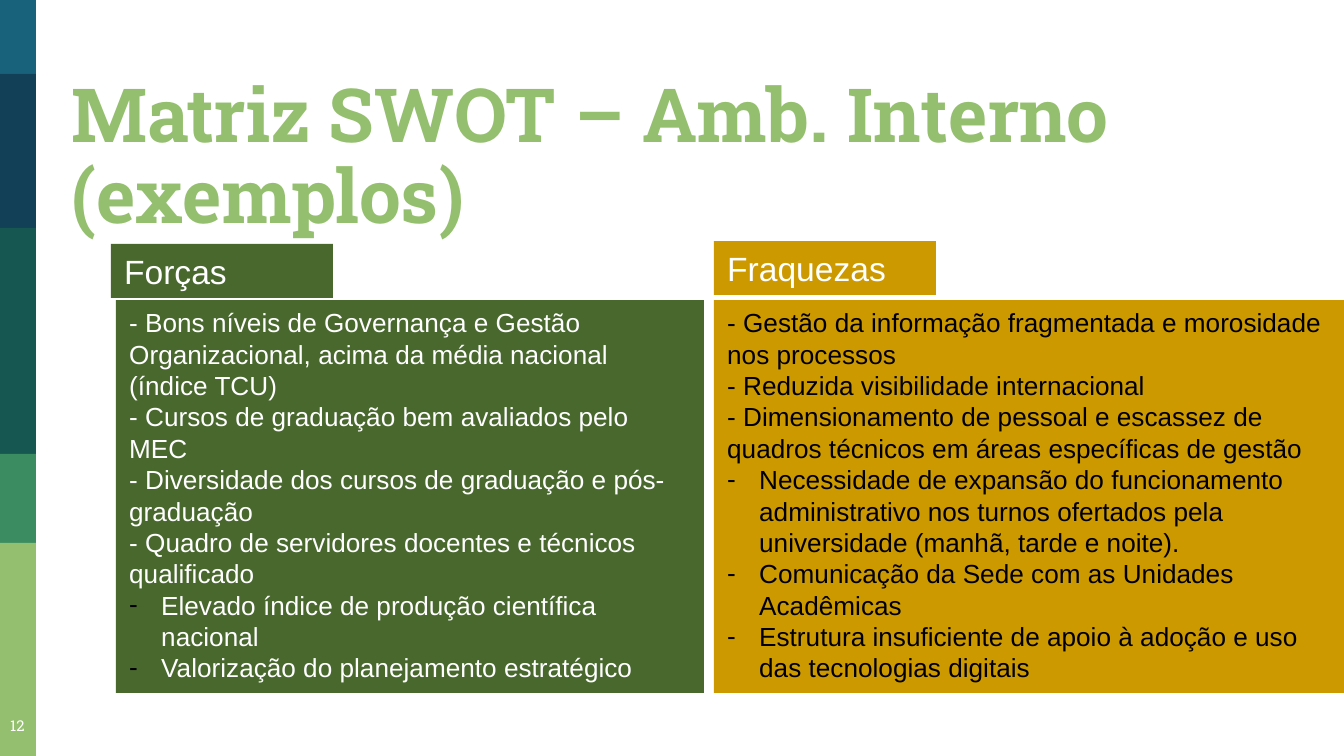
from lxml import etree
from pptx import Presentation
from pptx import util as u
from pptx.dml.color import RGBColor
from pptx.enum import shapes, text
from pptx.oxml.ns import qn

PX = 914400 / 134.4
COLORS = {
    "blue": "18637B", "navy": "124057", "teal": "165751", "green": "3B8D61",
    "lime": "94BF6E", "forest": "49682E", "gold": "CC9900",
    "white": "FFFFFF", "black": "000000",
}
FORMATS = {
    "title": {"size": u.Pt(40), "name": "Roboto Slab", "bold": True},
    "number": {"size": u.Pt(8), "name": "Roboto Slab"},
    "heading": {"size": u.Pt(18), "name": "Arial"},
    "body": {"size": u.Pt(14), "name": "Arial"},
}
INDENT = 32


def px(value):
    return u.Emu(round(value * PX))


def rgb(name):
    return RGBColor.from_string(COLORS[name])


class SlideBuilder:
    def __init__(self, slide):
        self.slide = slide

    def rectangle(self, box, fill):
        shape = self.slide.shapes.add_shape(
            shapes.MSO_SHAPE.RECTANGLE, *map(px, box))
        shape.shadow.inherit = False
        shape.fill.solid()
        shape.fill.fore_color.rgb = rgb(fill)
        shape.line.fill.background()
        return shape

    def text_box(self, box, words, style, color, **layout):
        shape = self.slide.shapes.add_textbox(*map(px, box))
        frame = shape.text_frame
        for side in ("left", "right", "top", "bottom"):
            setattr(frame, f"margin_{side}", u.Inches(0.1))
        self.add_lines(frame, [words], style, color, **layout)

    def panel(self, box, fill, lines, style, color, bullets=()):
        frame = self.rectangle(box, fill).text_frame
        self.add_lines(frame, lines, style, color)
        for line in bullets:
            paragraph = frame.add_paragraph()
            self.add_bullet(paragraph)
            self.add_line(paragraph, line, style, color)

    def add_lines(self, frame, lines, style, color,
                  anchor=text.MSO_ANCHOR.TOP, **layout):
        frame.word_wrap = True
        frame.vertical_anchor = anchor
        for index, line in enumerate(lines):
            paragraph = frame.add_paragraph() if index else frame.paragraphs[0]
            self.add_line(paragraph, line, style, color, **layout)

    def add_line(self, paragraph, line, style, color,
                 alignment=text.PP_ALIGN.LEFT, line_spacing=1.0):
        paragraph.alignment = alignment
        paragraph.line_spacing = line_spacing
        run = paragraph.add_run()
        run.text = line
        for name, value in FORMATS[style].items():
            setattr(run.font, name, value)
        run.font.color.rgb = rgb(color)

    def add_bullet(self, paragraph):
        properties = paragraph._p.get_or_add_pPr()
        properties.set("marL", str(px(INDENT)))
        properties.set("indent", str(-px(INDENT)))
        bullet_color = etree.SubElement(properties, qn("a:buClr"))
        etree.SubElement(bullet_color, qn("a:srgbClr"), val=COLORS["black"])
        etree.SubElement(properties, qn("a:buFont"), typeface="Arial")
        etree.SubElement(properties, qn("a:buChar"), char="-")


STRIPES = [("blue", 0), ("navy", 74), ("teal", 228), ("green", 454), ("lime", 543)]
STRENGTHS = [
    "- Bons níveis de Governança e Gestão Organizacional, acima da média nacional (índice TCU)",
    "- Cursos de graduação bem avaliados pelo MEC",
    "- Diversidade dos cursos de graduação e pós-graduação",
    "- Quadro de servidores docentes e técnicos qualificado",
]
STRENGTH_BULLETS = [
    "Elevado índice de produção científica nacional",
    "Valorização do planejamento estratégico",
]
WEAKNESSES = [
    "- Gestão da informação fragmentada e morosidade nos processos",
    "- Reduzida visibilidade internacional",
    "- Dimensionamento de pessoal e escassez de quadros técnicos em áreas específicas de gestão",
]
WEAKNESS_BULLETS = [
    "Necessidade de expansão do funcionamento administrativo nos turnos ofertados pela universidade (manhã, tarde e noite).",
    "Comunicação da Sede com as Unidades Acadêmicas",
    "Estrutura insuficiente de apoio à adoção e uso das tecnologias digitais",
]


def main():
    presentation = Presentation()
    presentation.slide_width, presentation.slide_height = px(1344), px(756)
    builder = SlideBuilder(
        presentation.slides.add_slide(presentation.slide_layouts[6]))

    # Side band: each stripe runs down to the next one
    ends = [top for _, top in STRIPES[1:]] + [756]
    for (color, top), end in zip(STRIPES, ends):
        builder.rectangle((0, top, 36, end - top), color)

    # Title and slide number
    builder.text_box((58, 82, 1286, 171), "Matriz SWOT – Amb. Interno (exemplos)",
                     "title", "lime", anchor=text.MSO_ANCHOR.BOTTOM,
                     line_spacing=0.9)
    builder.text_box((-8, 708, 51, 47), "12", "number", "white",
                     alignment=text.PP_ALIGN.CENTER)

    # Strengths
    builder.panel((111, 244, 222, 54), "forest", ["Forças"], "heading", "white")
    builder.panel((116, 300, 588, 393), "forest", STRENGTHS, "body", "white",
                  STRENGTH_BULLETS)

    # Weaknesses
    builder.panel((714, 241, 222, 54), "gold", ["Fraquezas"], "heading", "white")
    builder.panel((714, 300, 630, 393), "gold", WEAKNESSES, "body", "black",
                  WEAKNESS_BULLETS)

    presentation.save("out.pptx")


if __name__ == "__main__":
    main()
